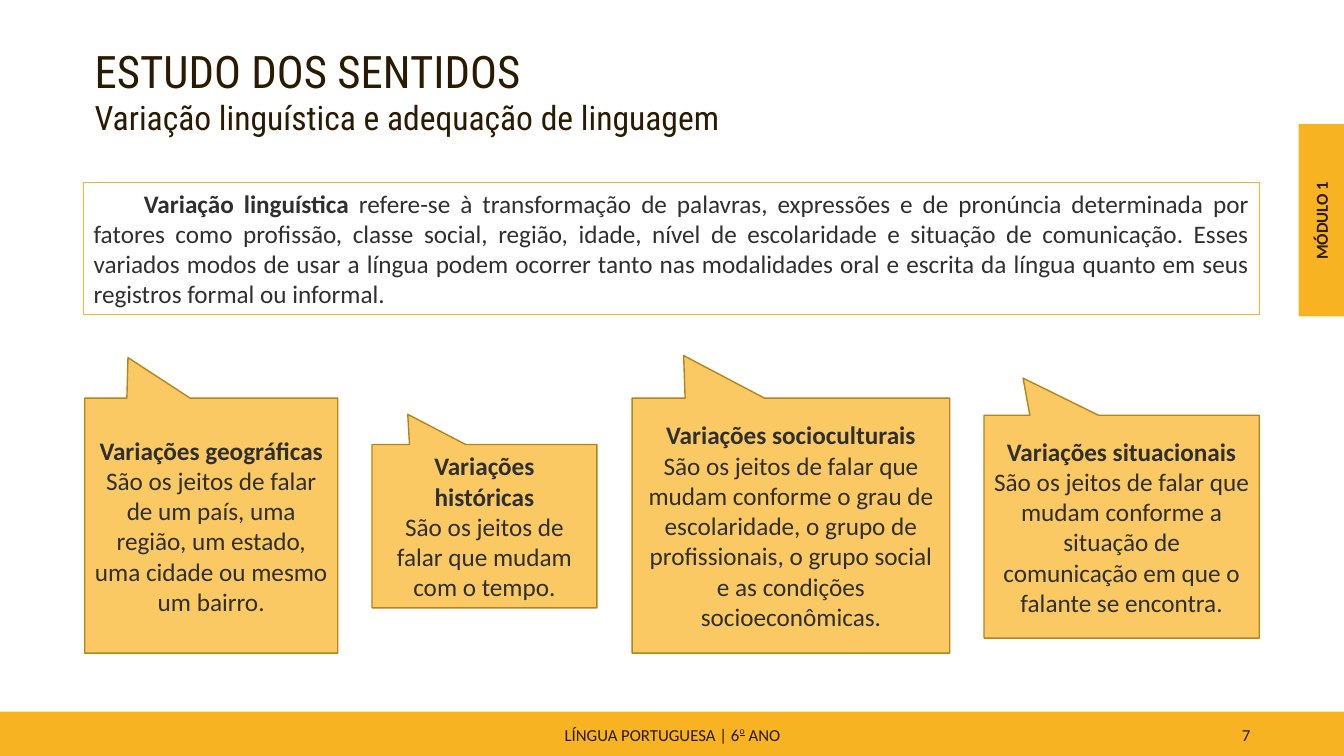
"""Builds the slide on linguistic variation with its four callouts."""
from dataclasses import dataclass

from pptx import Presentation
from pptx import util as u
from pptx.dml.color import RGBColor
from pptx.enum import shapes, text
from pptx.oxml.ns import qn
from lxml import etree


@dataclass(frozen=True)
class Theme:
    """Colours, fonts and type sizes of the slide."""
    accent: str = "F8B323"
    edge: str = "B7841A"
    dark: str = "2A1A00"
    body: str = "2F2F2E"
    head_font: str = "Roboto Condensed"
    body_font: str = "Calibri"
    title: int = 32
    subtitle: int = 24
    copy: int = 18
    small: int = 12


T = Theme()
ALIGN = text.PP_ALIGN
SHAPE = shapes.MSO_SHAPE
MIDDLE = text.MSO_ANCHOR.MIDDLE

DEFINITION = (
    "refere-se à transformação de palavras, expressões e de pronúncia "
    "determinada por fatores como profissão, classe social, região, idade, "
    "nível de escolaridade e situação de comunicação. Esses variados modos de "
    "usar a língua podem ocorrer tanto nas modalidades oral e escrita da "
    "língua quanto em seus registros formal ou informal."
)

CALLOUTS = [
    ((0.84, 3.95, 2.51, 2.53), (-0.329, -0.659), "Variações geográficas",
     "São os jeitos de falar de um país, uma região, um estado, "
     "uma cidade ou mesmo um bairro."),
    ((3.69, 4.41, 2.23, 1.62), (-0.341, -0.685), "Variações históricas",
     "São os jeitos de falar que mudam com o tempo."),
    ((6.27, 3.95, 3.15, 2.53), (-0.338, -0.667), "Variações socioculturais",
     "São os jeitos de falar que mudam conforme o grau de escolaridade, "
     "o grupo de profissionais, o grupo social e as condições "
     "socioeconômicas."),
    ((9.76, 4.12, 2.73, 2.21), (-0.358, -0.667), "Variações situacionais",
     "São os jeitos de falar que mudam conforme a situação de comunicação "
     "em que o falante se encontra."),
]


def add_run(p, words, size, color, font=T.body_font, bold=False):
    """Add one formatted run to a paragraph."""
    r = p.add_run()
    r.text = words
    r.font.size = u.Pt(size)
    r.font.name = font
    r.font.bold = bold
    r.font.color.rgb = RGBColor.from_string(color)
    return r


def add_label(s, box, align=ALIGN.LEFT, anchor=MIDDLE, after=0):
    """Add a wrapping text box and return it with its first paragraph."""
    sp = s.shapes.add_textbox(*map(u.Inches, box))
    tf = sp.text_frame
    tf.word_wrap = True
    tf.vertical_anchor = anchor
    p = tf.paragraphs[0]
    p.alignment = align
    p.space_after = u.Pt(after)
    return sp, p


def add_panel(s, kind, box, fill=None, line=None, width=1):
    """Add a flat preset shape with optional fill and outline."""
    sp = s.shapes.add_shape(kind, *map(u.Inches, box))
    sp.shadow.inherit = False
    if fill:
        sp.fill.solid()
        sp.fill.fore_color.rgb = RGBColor.from_string(fill)
    else:
        sp.fill.background()
    if line:
        sp.line.color.rgb = RGBColor.from_string(line)
        sp.line.width = u.Pt(width)
    else:
        sp.line.fill.background()
    sp.text_frame.word_wrap = True
    sp.text_frame.vertical_anchor = MIDDLE
    return sp


def set_opacity(sp, percent):
    """Make a solid shape fill partly transparent."""
    color = sp.fill._xPr.find(qn("a:solidFill"))[0]
    etree.SubElement(color, qn("a:alpha")).set("val", str(percent * 1000))


def add_callout(s, box, tip, heading, words):
    """Add a speech callout with a bold heading above its text."""
    sp = add_panel(s, SHAPE.RECTANGULAR_CALLOUT, box, T.accent, T.edge)
    set_opacity(sp, 70)
    sp.adjustments[0], sp.adjustments[1] = tip
    tf = sp.text_frame
    for p, line, bold in ((tf.paragraphs[0], heading, True),
                          (tf.add_paragraph(), words, False)):
        p.alignment = ALIGN.CENTER
        add_run(p, line, T.copy, T.body, bold=bold)


def add_title(s):
    """Add the title and the subtitle."""
    sp, p = add_label(s, (0.84, 0.38, 6.81, 1.04), anchor=text.MSO_ANCHOR.TOP)
    add_run(p, "ESTUDO DOS SENTIDOS", T.title, T.dark, T.head_font)
    add_run(sp.text_frame.add_paragraph(),
            "Variação linguística e adequação de linguagem",
            T.subtitle, T.dark, T.head_font)


def add_definition(s):
    """Add the outlined definition with its first-line indent."""
    sp = add_panel(s, SHAPE.RECTANGLE, (0.83, 1.81, 11.66, 1.31),
                   line=T.accent, width=0.75)
    p = sp.text_frame.paragraphs[0]
    p.alignment = ALIGN.JUSTIFY
    p._p.get_or_add_pPr().set("indent", str(u.Inches(0.5)))
    add_run(p, "Variação linguística ", T.copy, T.body, bold=True)
    add_run(p, DEFINITION, T.copy, T.body)


def add_footer(s):
    """Add the bottom band with the course name and page number."""
    add_panel(s, SHAPE.RECTANGLE, (0, 7.06, 13.33, 0.45), T.accent)
    _, p = add_label(s, (9.42, 7.1, 3.08, 0.38), ALIGN.RIGHT, after=6)
    add_run(p, "7", T.small, T.dark)
    _, p = add_label(s, (4.42, 7.1, 4.5, 0.38), ALIGN.CENTER, after=6)
    add_run(p, "LÍNGUA PORTUGUESA | 6", T.small, T.dark)
    ordinal = add_run(p, "o", T.small, T.dark)
    ordinal.font.underline = True
    ordinal._r.get_or_add_rPr().set("baseline", "45000")
    add_run(p, " ANO", T.small, T.dark)


def add_module_tab(s):
    """Add the side tab with its vertical label."""
    add_panel(s, SHAPE.RECTANGLE, (12.88, 1.23, 0.45, 1.91), T.accent)
    sp, p = add_label(s, (12.15, 2.04, 1.91, 0.3), ALIGN.CENTER,
                      text.MSO_ANCHOR.TOP)
    sp.rotation = 270
    add_run(p, "MÓDULO 1", T.small, T.dark, bold=True)


def main():
    """Build and save the slide."""
    prs = Presentation()
    prs.slide_width, prs.slide_height = u.Inches(13.33), u.Inches(7.5)
    s = prs.slides.add_slide(prs.slide_layouts[6])
    add_footer(s)
    add_module_tab(s)
    add_title(s)
    add_definition(s)
    for callout in CALLOUTS:
        add_callout(s, *callout)
    prs.save("out.pptx")


if __name__ == "__main__":
    main()
